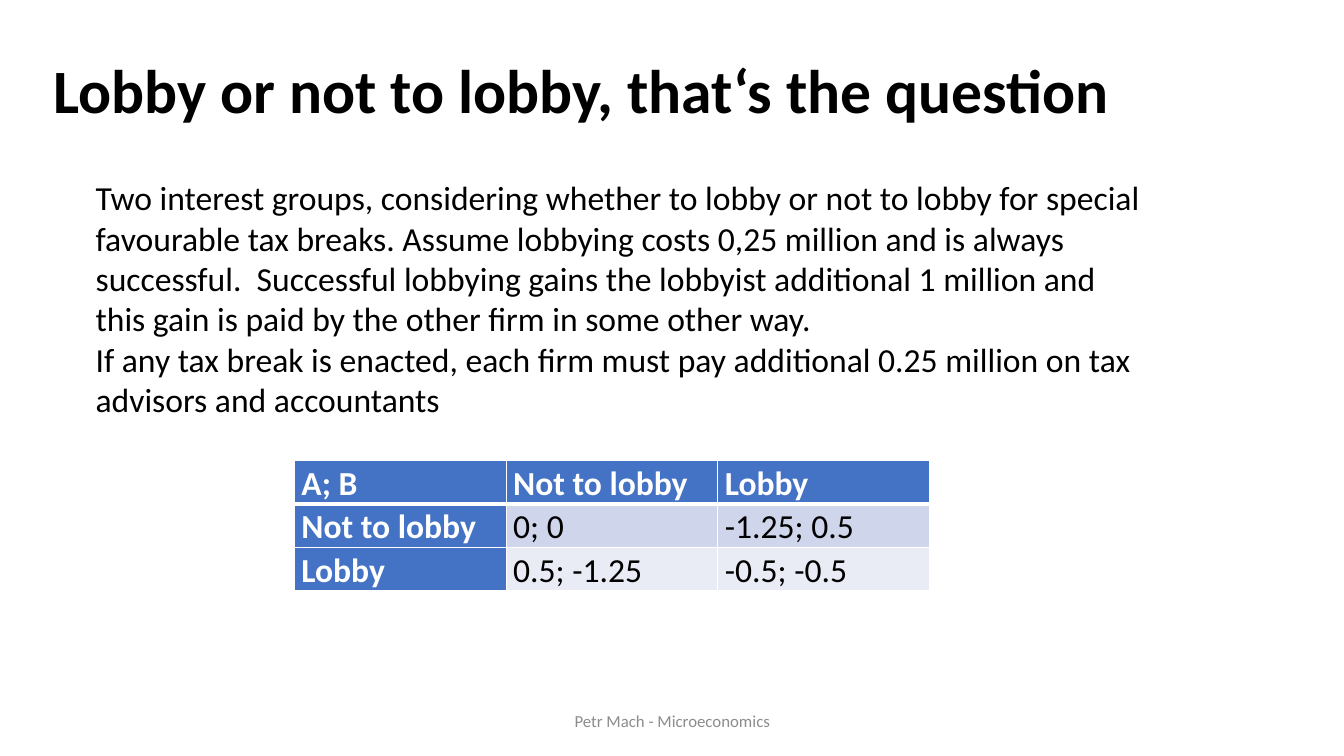
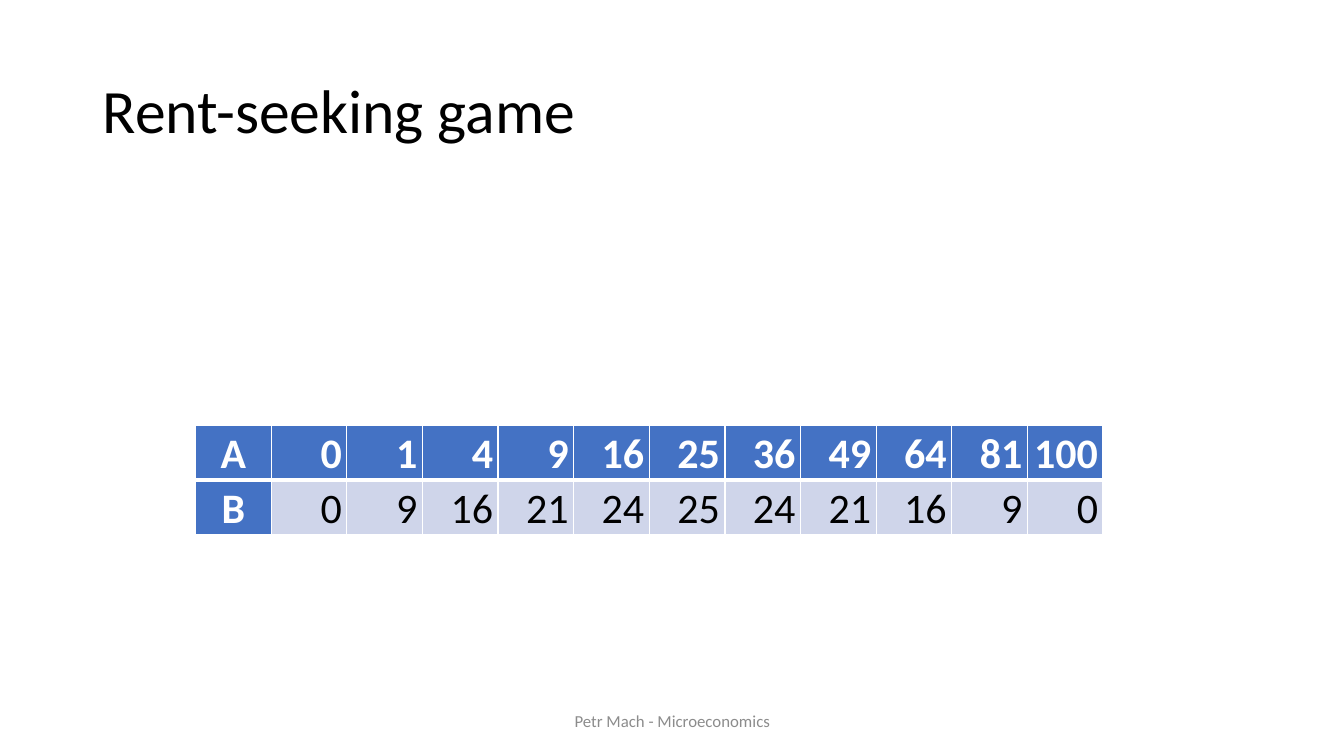
from lxml.etree import SubElement
from pptx import Presentation
from pptx.dml.color import RGBColor
from pptx.enum.text import MSO_ANCHOR, PP_ALIGN
from pptx.oxml.ns import qn
from pptx.util import Inches, Pt

FONT = "Calibri"
COLORS = {
    "text": "000000",
    "white": "FFFFFF",
    "footer": "8C8C8C",
    "header": "4472C4",
    "band_dark": "CFD5EA",
    "band_light": "E9EBF5",
}
FOOTER = "Petr Mach - Microeconomics"


def write(frame, lines, size, color="text", bold=False, align=PP_ALIGN.LEFT, spacing=1.0):
    """Fill a text frame with one paragraph per line, all in one style."""
    frame.word_wrap = True
    for index, line in enumerate(lines):
        para = frame.paragraphs[0] if index == 0 else frame.add_paragraph()
        para.alignment = align
        para.line_spacing = spacing
        span = para.add_run()
        span.text = line
        span.font.name = FONT
        span.font.size = Pt(size)
        span.font.bold = bold
        span.font.color.rgb = RGBColor.from_string(COLORS[color])


def add_grid(page, rows, left, top, column_width, row_height, size, margin, anchor, aligns):
    """Add a table with a header row and column; aligns holds (first column, other columns)."""
    grid = page.shapes.add_table(
        len(rows), len(rows[0]), Inches(left), Inches(top),
        Inches(column_width * len(rows[0])), Inches(row_height * len(rows))).table
    for column in grid.columns:
        column.width = Inches(column_width)
    for r, values in enumerate(rows):
        grid.rows[r].height = Inches(row_height)
        for c, value in enumerate(values):
            cell = grid.cell(r, c)
            is_header = r == 0 or c == 0
            cell.margin_left = cell.margin_right = Inches(margin)
            cell.margin_top = cell.margin_bottom = 0
            cell.vertical_anchor = anchor
            write(cell.text_frame, [value], size, "white" if is_header else "text",
                  is_header, aligns[min(c, 1)], 1.07)

            # The line under the header row is thicker than the others
            widths = {"a:lnL": 1, "a:lnR": 1, "a:lnT": 3 if r == 1 else 1,
                      "a:lnB": 3 if r == 0 else 1}
            properties = cell._tc.get_or_add_tcPr()
            for tag, width in widths.items():
                border = SubElement(properties, qn(tag), w=str(Pt(width)))
                fill = SubElement(border, qn("a:solidFill"))
                SubElement(fill, qn("a:srgbClr"), val=COLORS["white"])

            band = "band_dark" if r % 2 else "band_light"
            cell.fill.solid()
            cell.fill.fore_color.rgb = RGBColor.from_string(
                COLORS["header" if is_header else band])


deck = Presentation()
deck.slide_width = Inches(13.33)
deck.slide_height = Inches(7.5)

# Title and footer of every slide
titles = [
    ("Lobby or not to lobby, that‘s the question", True, (0.43, 0.3, 10.74, 1.25)),
    ("Rent-seeking game", False, (0.92, 0.4, 11.5, 1.45)),
]
pages = []
for title, bold, place in titles:
    page = deck.slides.add_slide(deck.slide_layouts[6])
    pages.append(page)
    title_box = page.shapes.add_textbox(*map(Inches, place))
    title_box.text_frame.vertical_anchor = MSO_ANCHOR.MIDDLE
    write(title_box.text_frame, [title], 44, bold=bold, spacing=0.9)
    footer_box = page.shapes.add_textbox(Inches(4.42), Inches(6.95), Inches(4.5), Inches(0.4))
    footer_box.text_frame.vertical_anchor = MSO_ANCHOR.MIDDLE
    write(footer_box.text_frame, [FOOTER], 12, "footer", align=PP_ALIGN.CENTER)
lobby_page, rent_page = pages

# Slide 1: lobbying game
story_box = lobby_page.shapes.add_textbox(Inches(0.85), Inches(1.71), Inches(10.61), Inches(2.93))
write(story_box.text_frame, [
    "Two interest groups, considering whether to lobby or not to lobby for special "
    "favourable tax breaks. Assume lobbying costs 0,25 million and is always successful.  "
    "Successful lobbying gains the lobbyist additional 1 million and this gain is paid by "
    "the other firm in some other way.",
    "If any tax break is enacted, each firm must pay additional 0.25 million on tax "
    "advisors and accountants",
], 24)
payoffs = [
    ["A; B", "Not to lobby", "Lobby"],
    ["Not to lobby", "0; 0", "-1.25; 0.5"],
    ["Lobby", "0.5; -1.25", "-0.5; -0.5"],
]
add_grid(lobby_page, payoffs, 2.92, 4.57, 2.1, 0.43, 24, 0.07,
         MSO_ANCHOR.MIDDLE, (PP_ALIGN.LEFT, PP_ALIGN.LEFT))

# Slide 2: rent-seeking game
rents = [
    ["A", "0", "1", "4", "9", "16", "25", "36", "49", "64", "81", "100"],
    ["B", "0", "9", "16", "21", "24", "25", "24", "21", "16", "9", "0"],
]
add_grid(rent_page, rents, 1.94, 4.22, 0.75, 0.54, 30, 0.05,
         MSO_ANCHOR.BOTTOM, (PP_ALIGN.CENTER, PP_ALIGN.RIGHT))

deck.save("out.pptx")
